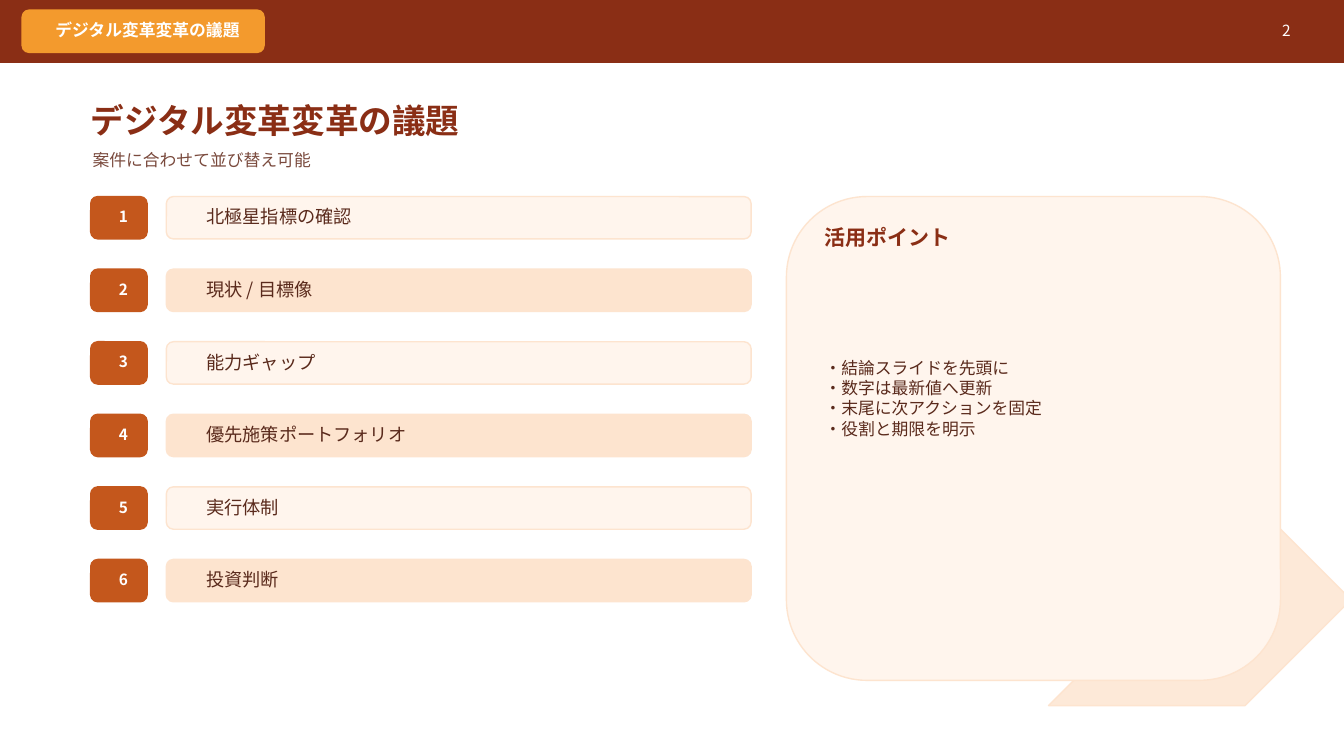
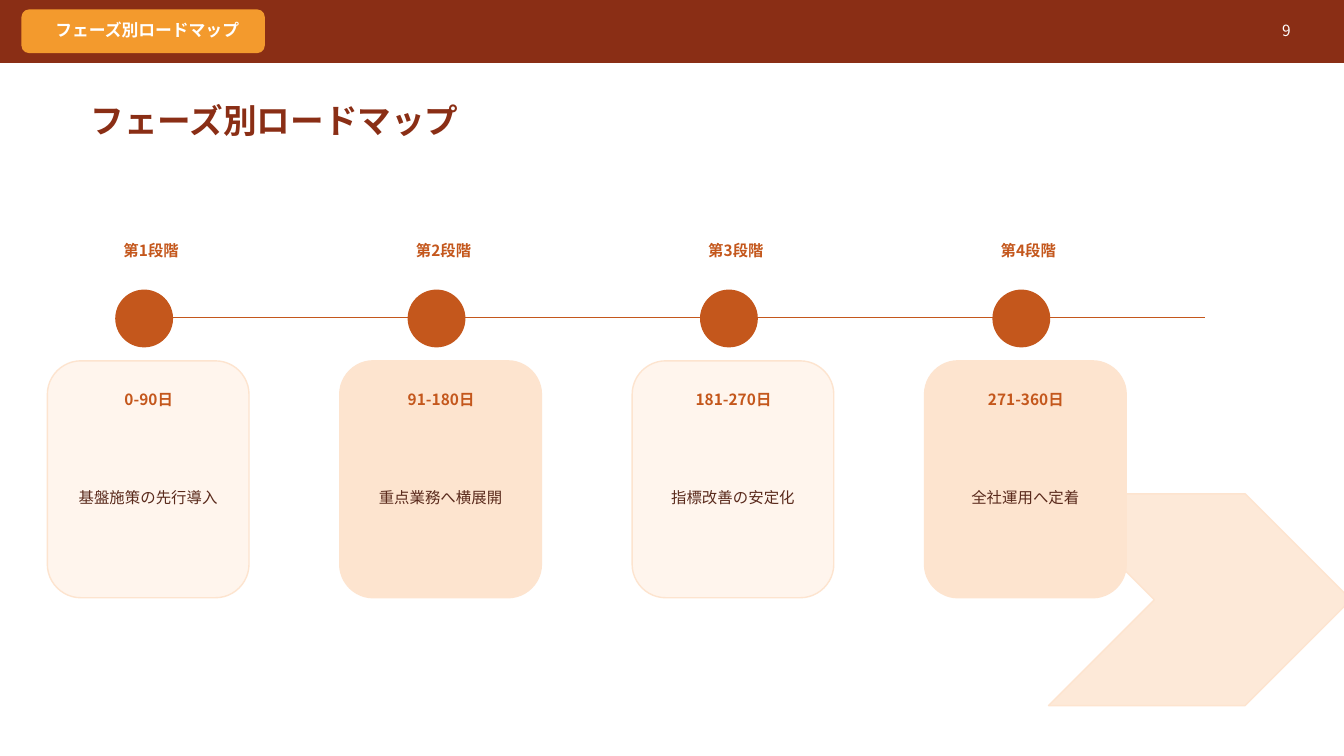
from dataclasses import dataclass

from lxml.etree import SubElement
from pptx import Presentation
from pptx.dml.color import RGBColor
from pptx.enum.shapes import MSO_CONNECTOR, MSO_SHAPE
from pptx.enum.text import MSO_ANCHOR, PP_ALIGN
from pptx.oxml.ns import qn
from pptx.util import Inches, Pt


@dataclass(frozen=True)
class Theme:
    brand: RGBColor = RGBColor.from_string("8A2E15")
    accent: RGBColor = RGBColor.from_string("C4571C")
    tab: RGBColor = RGBColor.from_string("F39A2D")
    peach: RGBColor = RGBColor.from_string("FDE4CF")
    cream: RGBColor = RGBColor.from_string("FFF5ED")
    white: RGBColor = RGBColor.from_string("FFFFFF")
    body: RGBColor = RGBColor.from_string("5A2A1C")
    muted: RGBColor = RGBColor.from_string("7A4A3D")
    title_font: str = "Cabin"
    body_font: str = "Noto Sans CJK JP"
    title_size: int = 24
    heading_size: int = 15
    item_size: int = 13
    text_size: int = 12
    small_size: int = 11


theme = Theme()


def add_box(slide, kind, left, top, width, height, fill, line=None):
    shape = slide.shapes.add_shape(
        kind, Inches(left), Inches(top), Inches(width), Inches(height))
    shape.shadow.inherit = False
    shape.fill.solid()
    shape.fill.fore_color.rgb = fill
    shape.line.color.rgb = line or fill
    shape.line.width = Pt(1)
    return shape


def add_text(slide, lines, left, top, width, height, size, color,
             bold=False, align=PP_ALIGN.LEFT, font=theme.body_font):
    text_box = slide.shapes.add_textbox(
        Inches(left), Inches(top), Inches(width), Inches(height))
    frame = text_box.text_frame
    frame.word_wrap = True
    frame.vertical_anchor = MSO_ANCHOR.MIDDLE
    for index, line in enumerate(lines):
        paragraph = frame.add_paragraph() if index else frame.paragraphs[0]
        paragraph.alignment = align
        run = paragraph.add_run()
        run.text = line
        run.font.size = Pt(size)
        run.font.bold = bold
        run.font.color.rgb = color
        run.font.name = font
        east_asian = SubElement(run.font._element, qn("a:ea"))
        east_asian.set("typeface", theme.body_font)


presentation = Presentation()
presentation.slide_width = Inches(13.33)
presentation.slide_height = Inches(7.5)

slides = []
for title, number in [("デジタル変革変革の議題", "2"), ("フェーズ別ロードマップ", "9")]:
    slide = presentation.slides.add_slide(presentation.slide_layouts[6])
    chevron = add_box(slide, MSO_SHAPE.CHEVRON, 10.4, 4.9, 3, 2.1, theme.peach)
    chevron_color = chevron.fill._xPr.find(qn("a:solidFill"))[0]
    SubElement(chevron_color, qn("a:alpha")).set("val", "80000")
    add_box(slide, MSO_SHAPE.RECTANGLE, 0, 0, 13.33, 0.62, theme.brand)
    add_box(slide, MSO_SHAPE.ROUNDED_RECTANGLE, 0.22, 0.1, 2.4, 0.42, theme.tab)
    add_text(slide, [title], 0.45, 0.18, 8.8, 0.24,
             theme.text_size, theme.white, bold=True)
    add_text(slide, [number], 12.15, 0.18, 0.75, 0.24,
             theme.small_size, theme.white, align=PP_ALIGN.RIGHT)
    add_text(slide, [title], 0.8, 0.95, 11.4, 0.48,
             theme.title_size, theme.brand, bold=True, font=theme.title_font)
    slides.append(slide)

agenda_slide, roadmap_slide = slides
card_fills = [theme.cream, theme.peach]

add_text(agenda_slide, ["案件に合わせて並び替え可能"], 0.82, 1.44, 11.2, 0.3,
         theme.text_size, theme.muted)

agenda_items = [
    "北極星指標の確認",
    "現状 / 目標像",
    "能力ギャップ",
    "優先施策ポートフォリオ",
    "実行体制",
    "投資判断",
]
for index, item in enumerate(agenda_items):
    top = 1.95 + 0.72 * index
    add_box(agenda_slide, MSO_SHAPE.ROUNDED_RECTANGLE, 0.9, top, 0.56, 0.42,
            theme.accent)
    add_text(agenda_slide, [str(index + 1)], 1.08, top + 0.1, 0.2, 0.2,
             theme.small_size, theme.white, bold=True, align=PP_ALIGN.CENTER)
    add_box(agenda_slide, MSO_SHAPE.ROUNDED_RECTANGLE, 1.65, top, 5.8, 0.42,
            card_fills[index % 2], theme.peach)
    add_text(agenda_slide, [item], 1.95, top + 0.1, 5.2, 0.2,
             theme.item_size, theme.body)

add_box(agenda_slide, MSO_SHAPE.ROUNDED_RECTANGLE, 7.8, 1.95, 4.9, 4.8,
        theme.cream, theme.peach)
add_text(agenda_slide, ["活用ポイント"], 8.08, 2.2, 4.1, 0.3,
         theme.heading_size, theme.brand, bold=True)
usage_points = [
    "・結論スライドを先頭に",
    "・数字は最新値へ更新",
    "・末尾に次アクションを固定",
    "・役割と期限を明示",
]
add_text(agenda_slide, usage_points, 8.08, 2.7, 4.2, 2.5,
         theme.text_size, theme.body)

timeline = roadmap_slide.shapes.add_connector(
    MSO_CONNECTOR.STRAIGHT, Inches(1.35), Inches(3.15), Inches(11.95), Inches(3.15))
timeline.line.color.rgb = theme.accent
timeline.line.width = Pt(1)
SubElement(timeline._element.spPr, qn("a:effectLst"))

phases = [
    ("0-90日", "基盤施策の先行導入"),
    ("91-180日", "重点業務へ横展開"),
    ("181-270日", "指標改善の安定化"),
    ("271-360日", "全社運用へ定着"),
]
for index, (period, goal) in enumerate(phases):
    left = 0.47 + 2.9 * index
    add_box(roadmap_slide, MSO_SHAPE.OVAL, left + 0.68, 2.88, 0.56, 0.56,
            theme.accent)
    add_text(roadmap_slide, [f"第{index + 1}段階"], left + 0.58, 2.36, 0.9, 0.24,
             theme.small_size, theme.accent, bold=True, align=PP_ALIGN.CENTER)
    add_box(roadmap_slide, MSO_SHAPE.ROUNDED_RECTANGLE, left, 3.58, 2, 2.35,
            card_fills[index % 2], theme.peach)
    add_text(roadmap_slide, [period], left + 0.23, 3.85, 1.55, 0.22,
             theme.small_size, theme.accent, bold=True, align=PP_ALIGN.CENTER)
    add_text(roadmap_slide, [goal], left + 0.14, 4.18, 1.72, 1.5,
             theme.small_size, theme.body, align=PP_ALIGN.CENTER)

presentation.save("out.pptx")
